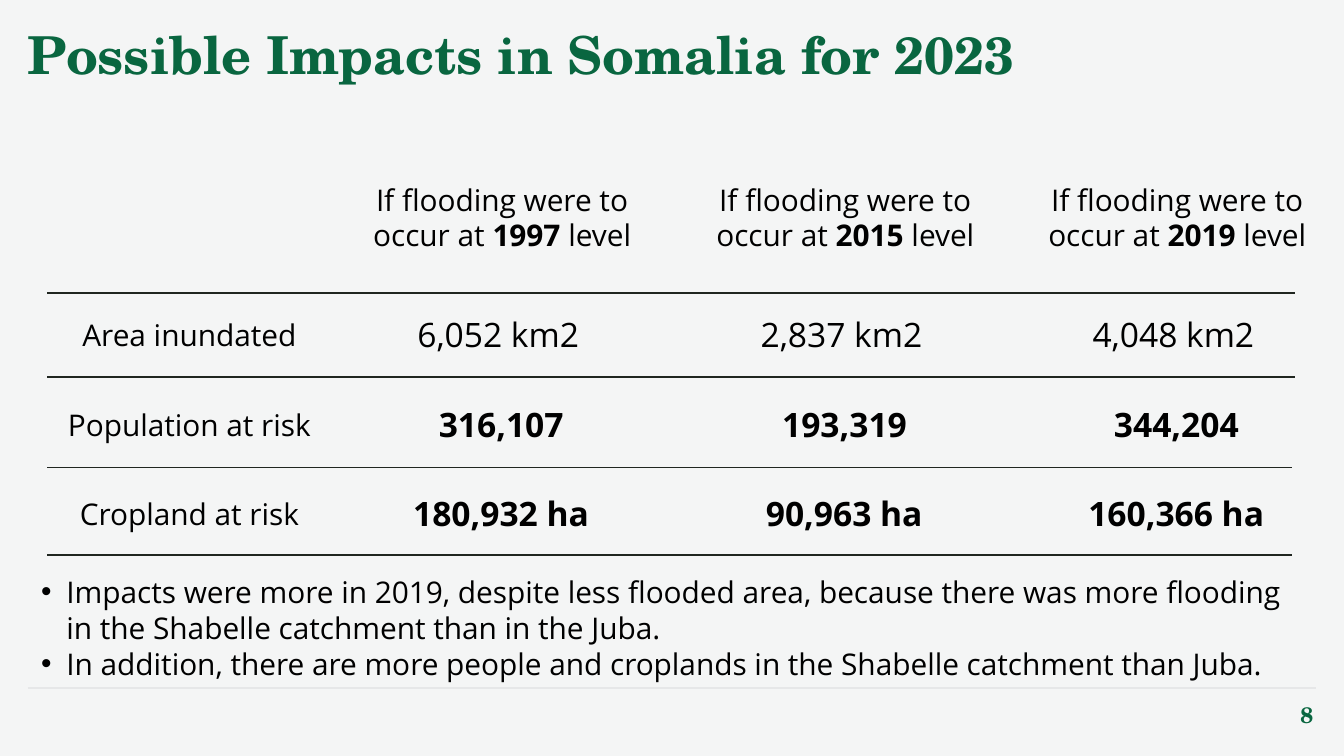
from lxml.etree import SubElement
from pptx import Presentation
from pptx.dml.color import RGBColor
from pptx.enum.shapes import MSO_CONNECTOR as Connector
from pptx.enum.text import MSO_ANCHOR as Anchor, MSO_AUTO_SIZE as AutoSize, PP_ALIGN as Align
from pptx.oxml.ns import qn
from pptx.util import Pt

BACKGROUND = RGBColor(0xF4, 0xF5, 0xF5)
GREEN = RGBColor(0x09, 0x66, 0x40)
BLACK = RGBColor(0x00, 0x00, 0x00)
RULE = RGBColor(0x20, 0x26, 0x20)
FOOTER_RULE = RGBColor(0xE6, 0xE7, 0xE8)
HEADING_FONT = "TeX Gyre Schola"
BODY_FONT = "Open Sans"

presentation = Presentation()
presentation.slide_width = Pt(720)
presentation.slide_height = Pt(405)
slide = presentation.slides.add_slide(presentation.slide_layouts[6])
slide.background.fill.solid()
slide.background.fill.fore_color.rgb = BACKGROUND


def add_text(left, top, width, height, lines, size, font=BODY_FONT, color=BLACK,
             bold=None, align=Align.LEFT, wrap=True):
    shape = slide.shapes.add_textbox(Pt(left), Pt(top), Pt(width), Pt(height))
    frame = shape.text_frame
    frame.word_wrap = wrap
    if font == BODY_FONT:
        frame.auto_size = AutoSize.SHAPE_TO_FIT_TEXT
    frame.text = "\n".join(lines)
    for paragraph in frame.paragraphs:
        paragraph.alignment = align
        paragraph.font.name = font
        paragraph.font.size = Pt(size)
        paragraph.font.color.rgb = color
        paragraph.font.bold = bold
    return frame


def add_rule(left, right, top, color):
    line = slide.shapes.add_connector(Connector.STRAIGHT, Pt(left), Pt(top), Pt(right), Pt(top))
    line.line.color.rgb = color
    line.line.width = Pt(0.75)
    SubElement(line._element.spPr, qn("a:effectLst"))


add_rule(15, 705, 368.6, FOOTER_RULE)

title = add_text(15, 5, 647, 45.4, ["Possible Impacts in Somalia for 2023"], 28,
                 HEADING_FONT, GREEN, True)
title.margin_left = 0
title.margin_top = title.margin_bottom = Pt(7.2)

page_number = add_text(667.4, 367.2, 43.2, 31, ["8"], 12, HEADING_FONT, GREEN, True, Align.RIGHT)
page_number.margin_top = page_number.margin_bottom = Pt(7.2)
page_number.vertical_anchor = Anchor.MIDDLE

centers = [269, 452.9, 630.7]
for year, center, width in zip(["1997", "2015", "2019"], centers, [182, 172.8, 172.8]):
    header = add_text(center - width / 2, 93.6, width, 46, ["If flooding were to occur at "],
                      16, align=Align.CENTER)
    year_run = header.paragraphs[0].add_run()
    year_run.text = year
    year_run.font.bold = True
    header.paragraphs[0].add_run().text = " level"

rows = [
    ("Area inundated", 166.3, 164.9, False,
     [("6,052 km2", 105), ("2,837 km2", 105), ("4,048 km2", 105)]),
    ("Population at risk", 214.6, 213.1, True,
     [("316,107", 82), ("193,319", 82), ("344,204", 82)]),
    ("Cropland at risk", 262.1, 260.6, True,
     [("180,932 ha", 109.5), ("90,963 ha", 99.4), ("160,366 ha", 109.5)]),
]
for label, label_top, value_top, bold, values in rows:
    add_text(25.2, label_top, 152.6, 26.6, [label], 16, align=Align.CENTER)
    for center, (value, width) in zip(centers, values):
        add_text(center - width / 2, value_top, width, 28.8, [value], 18, bold=bold, wrap=False)

for top, right in [(157, 694), (201.9, 694), (250.6, 692), (297.4, 692)]:
    add_rule(25.2, right, top, RULE)

findings = add_text(15, 303.8, 682.6, 65.5, [
    "Impacts were more in 2019, despite less flooded area, because there was more flooding "
    "in the Shabelle catchment than in the Juba.",
    "In addition, there are more people and croplands in the Shabelle catchment than Juba.",
], 16)
for paragraph in findings.paragraphs:
    properties = paragraph._p.get_or_add_pPr()
    properties.set("marL", str(Pt(13.5)))
    properties.set("indent", str(-Pt(13.5)))
    bullet_color = properties.makeelement(qn("a:buClr"))
    SubElement(bullet_color, qn("a:srgbClr"), val=str(BLACK))
    bullet_font = properties.makeelement(qn("a:buFont"), typeface="Arial")
    bullet = properties.makeelement(qn("a:buChar"), char="•")
    for position, element in enumerate([bullet_color, bullet_font, bullet]):
        properties.insert(position, element)

presentation.save("out.pptx")
